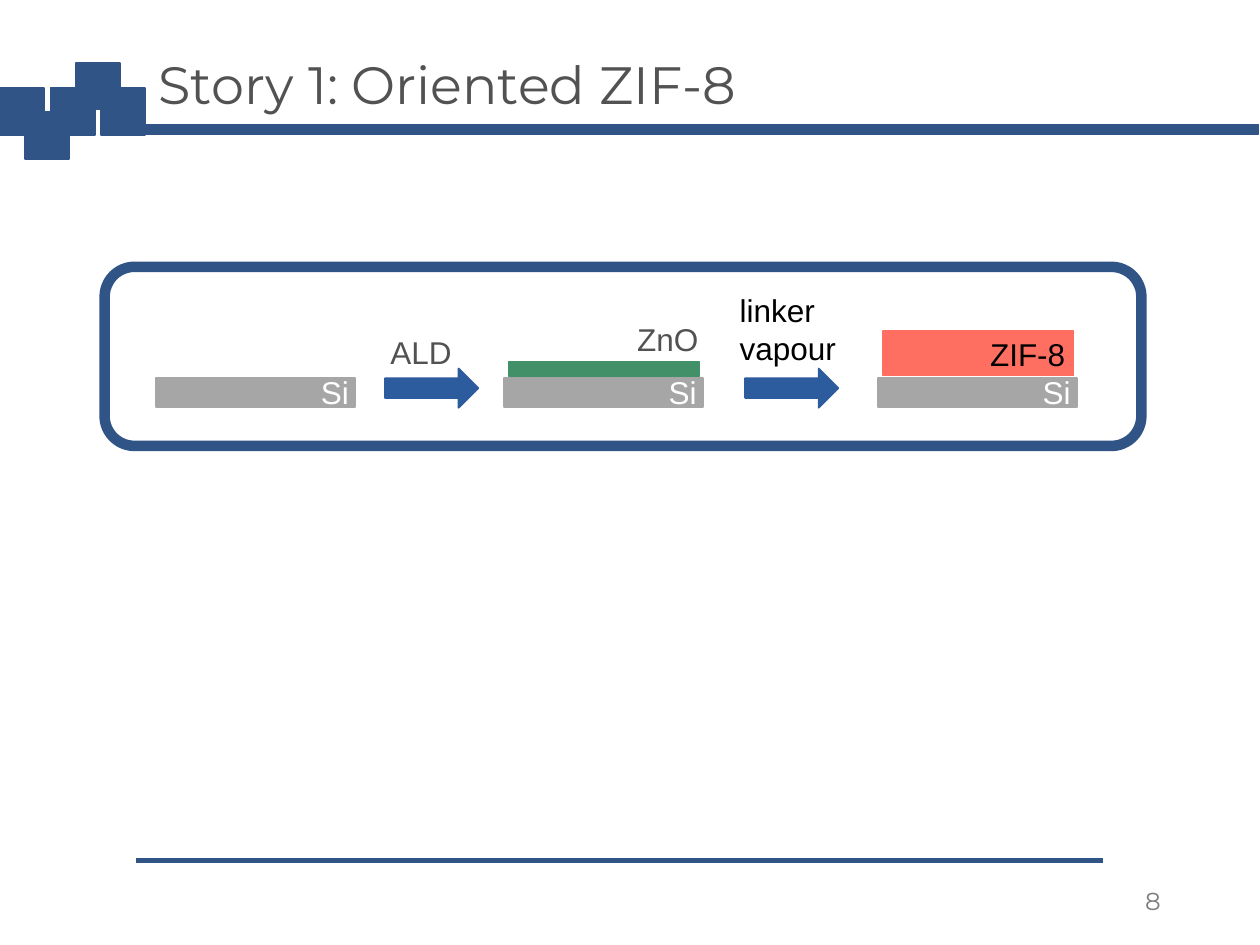
"""Build the slide on the growth of oriented ZIF-8 on silicon."""
from dataclasses import dataclass

import pptx
import pptx.dml.color
import pptx.enum.shapes
import pptx.enum.text
import pptx.util
from lxml import etree

Cm = pptx.util.Cm
Pt = pptx.util.Pt
SHAPE = pptx.enum.shapes.MSO_SHAPE
ALIGN = pptx.enum.text.PP_ALIGN
ANCHOR = pptx.enum.text.MSO_ANCHOR

NAVY = "305486"
ARROW_BLUE = "2D5C9E"
SILICON = "A6A6A6"
DARK = "525252"
BASE_Y = 7.62
LABEL_H = 1.02


@dataclass
class Film:
    name: str
    top: float
    height: float
    color: str
    label_box: tuple[float, float, float, float]
    label_color: str
    align: ALIGN


@dataclass
class Stage:
    left: float
    film: Film | None = None


@dataclass
class Step:
    arrow_left: float
    text: str
    label_box: tuple[float, float, float, float]
    color: str


STAGES = [
    Stage(3.15),
    Stage(10.16, Film("ZnO", 7.29, 0.3, "429067", (11.18, 6.32, 3.15, LABEL_H), DARK, ALIGN.RIGHT)),
    Stage(17.7, Film("ZIF-8", 6.68, 0.89, "FF6F61", (19.71, 6.63, 2.21, LABEL_H), "000000", ALIGN.LEFT)),
]
STEPS = [
    Step(7.76, "ALD", (7.62, 6.58, 1.8, LABEL_H), DARK),
    Step(15.02, "linker vapour", (14.66, 5.74, 2.77, 1.8), "000000"),
]


def rgb(value: str) -> pptx.dml.color.RGBColor:
    return pptx.dml.color.RGBColor.from_string(value)


def add_shape(s, kind, box: tuple, color: str, filled: bool = True, width: float = 1):
    sp = s.shapes.add_shape(kind, *map(Cm, box))
    sp.shadow.inherit = False
    if filled:
        sp.fill.solid()
        sp.fill.fore_color.rgb = rgb(color)
    else:
        sp.fill.background()
    sp.line.color.rgb = rgb(color)
    sp.line.width = Pt(width)
    return sp


def add_text(s, text: str, box: tuple, *, color: str, size: float = 18, font: str = "Arial",
             align=ALIGN.LEFT, anchor=ANCHOR.TOP, spacing: float = 1.0) -> None:
    tf = s.shapes.add_textbox(*map(Cm, box)).text_frame
    tf.word_wrap = True
    tf.vertical_anchor = anchor
    p = tf.paragraphs[0]
    p.alignment = align
    p.line_spacing = spacing
    r = p.add_run()
    r.text = text
    r.font.name = font
    r.font.size = Pt(size)
    r.font.color.rgb = rgb(color)


def add_rule(s, left: float, right: float, y: float) -> None:
    line = s.shapes.add_connector(pptx.enum.shapes.MSO_CONNECTOR.STRAIGHT, Cm(left), Cm(y), Cm(right), Cm(y))
    line.line.color.rgb = rgb(NAVY)
    line.line.width = Pt(3)
    etree.SubElement(line._element.spPr, pptx.oxml.ns.qn("a:effectLst"))


def draw_stage(s, stage: Stage) -> None:
    add_shape(s, SHAPE.RECTANGLE, (stage.left, BASE_Y, 4.01, 0.58), SILICON)
    film = stage.film
    if film:
        add_shape(s, SHAPE.RECTANGLE, (stage.left + 0.1, film.top, 3.84, film.height), film.color)
        add_text(s, film.name, film.label_box, color=film.label_color, align=film.align)
    add_text(s, "Si", (stage.left + 3.07, 7.4, 1.9, LABEL_H), color="FFFFFF")


def draw_step(s, step: Step) -> None:
    add_shape(s, SHAPE.RIGHT_ARROW, (step.arrow_left, 7.43, 1.88, 0.79), ARROW_BLUE)
    add_text(s, step.text, step.label_box, color=step.color)


def draw_frame(s) -> None:
    add_rule(s, 2.74, 22.23, 17.35)
    add_shape(s, SHAPE.RECTANGLE, (2.87, 2.51, 22.5, 0.2), NAVY)
    for i, top in enumerate((1.78, 2.26, 1.78, 1.27, 1.78)):
        add_shape(s, SHAPE.RECTANGLE, (i * 0.51, top, 0.89, 0.94), NAVY)
    add_text(s, "8", (17.93, 17.65, 5.72, LABEL_H), color="7C7C7C", size=14, font="Montserrat",
             align=ALIGN.RIGHT, anchor=ANCHOR.MIDDLE)
    add_text(s, "Story 1: Oriented ZIF-8", (2.95, 0.89, 21.89, 1.73), color=DARK, size=30,
             font="Montserrat", anchor=ANCHOR.MIDDLE, spacing=0.9)


def main() -> None:
    prs = pptx.Presentation()
    prs.slide_width, prs.slide_height = Cm(25.4), Cm(19.05)
    s = prs.slides.add_slide(prs.slide_layouts[6])
    draw_frame(s)
    add_shape(s, SHAPE.ROUNDED_RECTANGLE, (2.11, 5.38, 20.9, 3.61), NAVY, filled=False, width=6)
    for stage in STAGES:
        draw_stage(s, stage)
    for step in STEPS:
        draw_step(s, step)
    prs.save("out.pptx")


if __name__ == "__main__":
    main()
